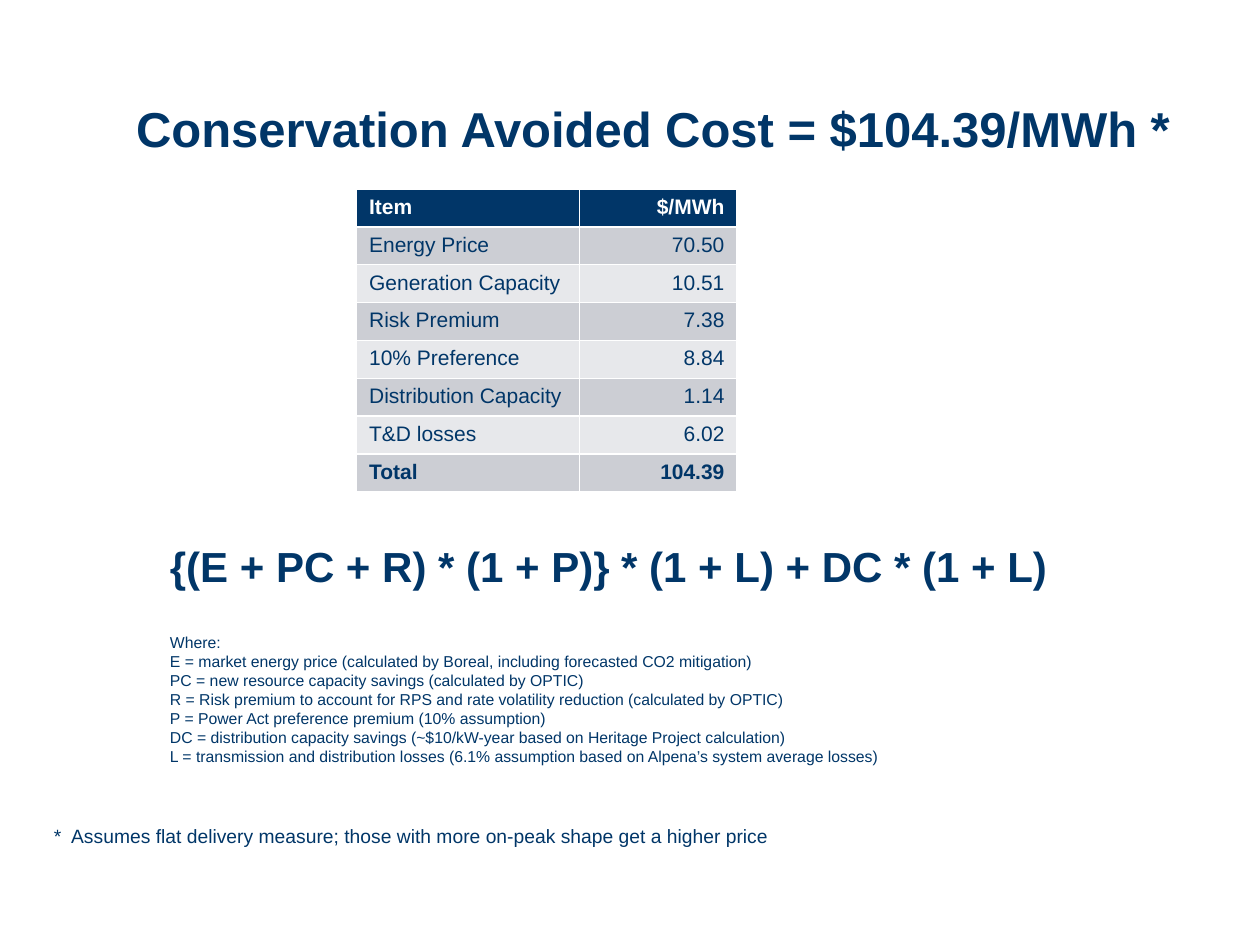
from dataclasses import dataclass

from pptx import Presentation
from pptx.dml.color import RGBColor
from pptx.enum.text import MSO_ANCHOR, PP_ALIGN
from pptx.util import Inches, Pt

COLORS = {"navy": "013668", "white": "FFFFFF", "dark_band": "CCCED4", "light_band": "E7E8EB"}
FONT = "Arial"


@dataclass
class Line:
    text: str
    size: float
    bold: bool = False
    before: float = 0
    spacing: float | None = None


@dataclass
class TextBox:
    left: float
    top: float
    width: float
    height: float
    lines: list[Line]
    anchor: MSO_ANCHOR = MSO_ANCHOR.TOP
    inset: bool = True
    wrap: bool = True


@dataclass
class CostRow:
    item: str
    price: str
    fill: str
    color: str = "navy"
    bold: bool = False


def rgb(name: str) -> RGBColor:
    return RGBColor.from_string(COLORS[name])


def add_run(p, text: str, size: float, color: str, bold: bool) -> None:
    r = p.add_run()
    r.text = text
    r.font.name = FONT
    r.font.size = Pt(size)
    r.font.bold = bold
    r.font.color.rgb = rgb(color)


def add_text(s, box: TextBox) -> None:
    sp = s.shapes.add_textbox(
        Inches(box.left), Inches(box.top), Inches(box.width), Inches(box.height)
    )
    tf = sp.text_frame
    tf.word_wrap = box.wrap
    tf.vertical_anchor = box.anchor
    if not box.inset:
        tf.margin_left = tf.margin_top = tf.margin_right = tf.margin_bottom = 0
    for i, line in enumerate(box.lines):
        p = tf.add_paragraph() if i else tf.paragraphs[0]
        if line.before:
            p.space_before = Pt(line.before)
        if line.spacing:
            p.line_spacing = Pt(line.spacing)
        add_run(p, line.text, line.size, "navy", line.bold)


def add_cost_table(s, rows: list[CostRow]) -> None:
    widths = (1.77, 1.25)
    row_height = 0.3
    table = s.shapes.add_table(
        len(rows), len(widths), Inches(2.83), Inches(1.5),
        Inches(sum(widths)), Inches(row_height * len(rows)),
    ).table
    for column, width in zip(table.columns, widths):
        column.width = Inches(width)
    for i, row in enumerate(rows):
        table.rows[i].height = Inches(row_height)
        for j, (text, align) in enumerate(
            ((row.item, PP_ALIGN.LEFT), (row.price, PP_ALIGN.RIGHT))
        ):
            cell = table.cell(i, j)
            cell.fill.solid()
            cell.fill.fore_color.rgb = rgb(row.fill)
            p = cell.text_frame.paragraphs[0]
            p.alignment = align
            add_run(p, text, 12, row.color, row.bold)


COSTS = [
    ("Energy Price", "70.50"),
    ("Generation Capacity", "10.51"),
    ("Risk Premium", "7.38"),
    ("10% Preference", "8.84"),
    ("Distribution Capacity", "1.14"),
    ("T&D losses", "6.02"),
    ("Total", "104.39"),
]
DEFINITIONS = [
    "E = market energy price (calculated by Boreal, including forecasted CO2 mitigation)",
    "PC = new resource capacity savings (calculated by OPTIC)",
    "R = Risk premium to account for RPS and rate volatility reduction (calculated by OPTIC)",
    "P = Power Act preference premium (10% assumption)",
    "DC = distribution capacity savings (~$10/kW-year based on Heritage Project calculation)",
    "L = transmission and distribution losses (6.1% assumption based on Alpena’s system average losses)",
]


def main() -> None:
    prs = Presentation()
    prs.slide_width, prs.slide_height = Inches(10), Inches(7.5)
    s = prs.slides.add_slide(prs.slide_layouts[6])

    title = Line("Conservation Avoided Cost = $104.39/MWh *", 28, bold=True, spacing=27)
    add_text(s, TextBox(1.08, 0.12, 8.42, 1.13, [title], MSO_ANCHOR.BOTTOM, inset=False))

    formula = [
        Line("{(E + PC + R) * (1 + P)} * (1 + L) + DC * (1 + L)", 24, bold=True),
        Line("Where:", 9, before=24),
        *(Line(text, 9) for text in DEFINITIONS),
    ]
    add_text(s, TextBox(1.25, 4.23, 7.39, 1.9, formula, MSO_ANCHOR.MIDDLE))

    header = CostRow("Item", "$/MWh", "navy", "white", True)
    bands = ("dark_band", "light_band")
    body = [
        CostRow(item, price, bands[i % 2], bold=item == "Total")
        for i, (item, price) in enumerate(COSTS)
    ]
    add_cost_table(s, [header, *body])

    note = Line(
        "*  Assumes flat delivery measure; those with more on-peak shape get a higher price", 11
    )
    add_text(s, TextBox(0.33, 6.49, 5.91, 0.29, [note], wrap=False))

    prs.save("out.pptx")


if __name__ == "__main__":
    main()
